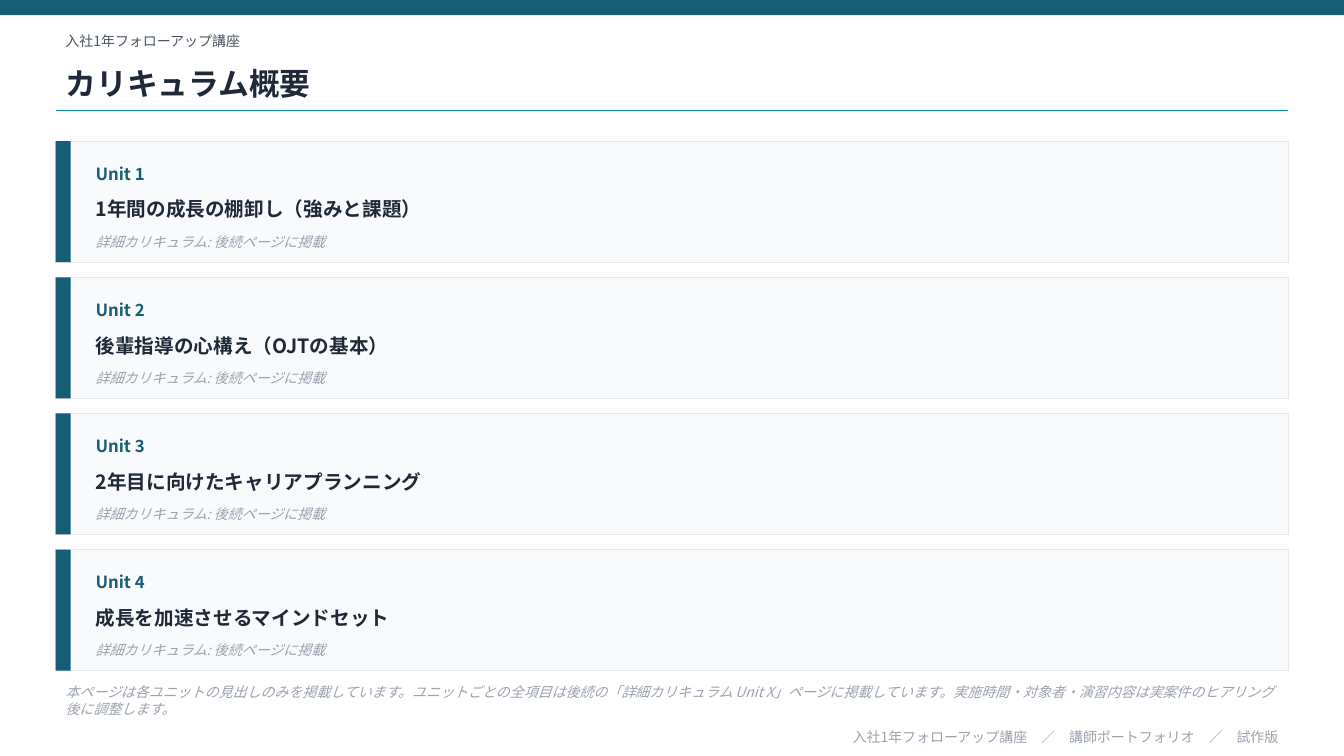
from lxml import etree
from pptx import Presentation
from pptx.dml.color import RGBColor
from pptx.enum.shapes import MSO_CONNECTOR, MSO_SHAPE
from pptx.enum.text import MSO_ANCHOR, MSO_AUTO_SIZE, PP_ALIGN
from pptx.oxml.ns import qn
from pptx.util import Cm, Pt

RECT = MSO_SHAPE.RECTANGLE
LINE = MSO_CONNECTOR.STRAIGHT
MIDDLE = MSO_ANCHOR.MIDDLE
FIXED = MSO_AUTO_SIZE.NONE
LEFT, RIGHT = PP_ALIGN.LEFT, PP_ALIGN.RIGHT

FONT = "Noto Sans CJK JP"
COLORS = {
    "teal": "155E75",
    "cyan": "0891B2",
    "ink": "1F2937",
    "slate": "4B5563",
    "gray": "9CA3AF",
    "card": "F9FAFB",
    "edge": "E5E7EB",
}
PAGE_W, PAGE_H = 33.87, 19.05
MARGIN, WIDTH = 1.4, 31.06
BAR = 0.38
CARD_TOP, CARD_H, STEP = 3.56, 3.05, 3.43
TEXT_X, TEXT_W = 2.16, 29.79
COURSE = "入社1年フォローアップ講座"
DETAIL = "詳細カリキュラム: 後続ページに掲載"
NOTE = (
    "本ページは各ユニットの見出しのみを掲載しています。"
    "ユニットごとの全項目は後続の「詳細カリキュラム Unit X」ページに掲載しています。"
    "実施時間・対象者・演習内容は実案件のヒアリング後に調整します。"
)
UNITS = [
    "1年間の成長の棚卸し（強みと課題）",
    "後輩指導の心構え（OJTの基本）",
    "2年目に向けたキャリアプランニング",
    "成長を加速させるマインドセット",
]


def color(name):
    """Return the named colour."""
    return RGBColor.from_string(COLORS[name])


def write(shape, text, size, tone, bold=False, italic=False, align=LEFT):
    """Fill a shape with one formatted paragraph."""
    frame = shape.text_frame
    frame.text = text
    frame.word_wrap = True
    frame.auto_size = FIXED
    frame.vertical_anchor = MIDDLE
    para = frame.paragraphs[0]
    para.alignment = align
    run = para.runs[0]
    font = run.font
    font.name, font.size = FONT, Pt(size)
    font.bold, font.italic = bold, italic
    font.color.rgb = color(tone)
    east = etree.SubElement(font._element, qn("a:ea"))
    east.set("typeface", FONT)


def add_text(slide, box, text, size, tone, **style):
    """Add a text box at the given place in centimetres."""
    shape = slide.shapes.add_textbox(*map(Cm, box))
    write(shape, text, size, tone, **style)


def add_rect(slide, box, fill, edge=None):
    """Add a flat rectangle with an optional thin edge."""
    shape = slide.shapes.add_shape(RECT, *map(Cm, box))
    shape.shadow.inherit = False
    shape.fill.solid()
    shape.fill.fore_color.rgb = color(fill)
    if edge:
        shape.line.color.rgb = color(edge)
        shape.line.width = Pt(0.5)
    else:
        shape.line.fill.background()


def add_rule(slide, top):
    """Add the line below the title."""
    rule = slide.shapes.add_connector(
        LINE, Cm(MARGIN), Cm(top), Cm(MARGIN + WIDTH), Cm(top)
    )
    rule.line.color.rgb = color("cyan")
    rule.line.width = Pt(1)
    etree.SubElement(rule._element.spPr, qn("a:effectLst"))


def add_title(slide, box, text):
    """Place and format the title placeholder."""
    title = slide.shapes.title
    title.left, title.top, title.width, title.height = map(Cm, box)
    write(title, text, 22, "ink", bold=True)


def add_card(slide, index, topic):
    """Add one unit card with its accent bar and three lines."""
    top = CARD_TOP + index * STEP
    add_rect(slide, (MARGIN, top, WIDTH, CARD_H), "card", "edge")
    add_rect(slide, (MARGIN, top, BAR, CARD_H), "teal")
    label = f"Unit {index + 1}"
    add_text(slide, (TEXT_X, top + 0.3, 3.81, 1.02), label, 12, "teal", bold=True)
    add_text(slide, (TEXT_X, top + 1.14, TEXT_W, 1.14), topic, 14, "ink", bold=True)
    add_text(slide, (TEXT_X, top + 2.16, TEXT_W, 0.76), DETAIL, 10, "gray", italic=True)


def main():
    """Build and save the slide."""
    deck = Presentation()
    deck.slide_width, deck.slide_height = Cm(PAGE_W), Cm(PAGE_H)
    slide = deck.slides.add_slide(deck.slide_layouts[5])
    add_rect(slide, (0, 0, PAGE_W, BAR), "teal")
    add_text(slide, (MARGIN, 0.64, WIDTH, 0.76), COURSE, 10, "slate")
    add_title(slide, (MARGIN, 1.4, WIDTH, 1.4), "カリキュラム概要")
    add_rule(slide, 2.79)
    for index, topic in enumerate(UNITS):
        add_card(slide, index, topic)
    add_text(slide, (MARGIN, 17.15, WIDTH, 1.02), NOTE, 10, "gray", italic=True)
    footer = f"{COURSE}　／　講師ポートフォリオ　／　試作版"
    add_text(slide, (MARGIN, 18.29, WIDTH, 0.56), footer, 10, "gray", align=RIGHT)
    deck.save("out.pptx")


if __name__ == "__main__":
    main()
